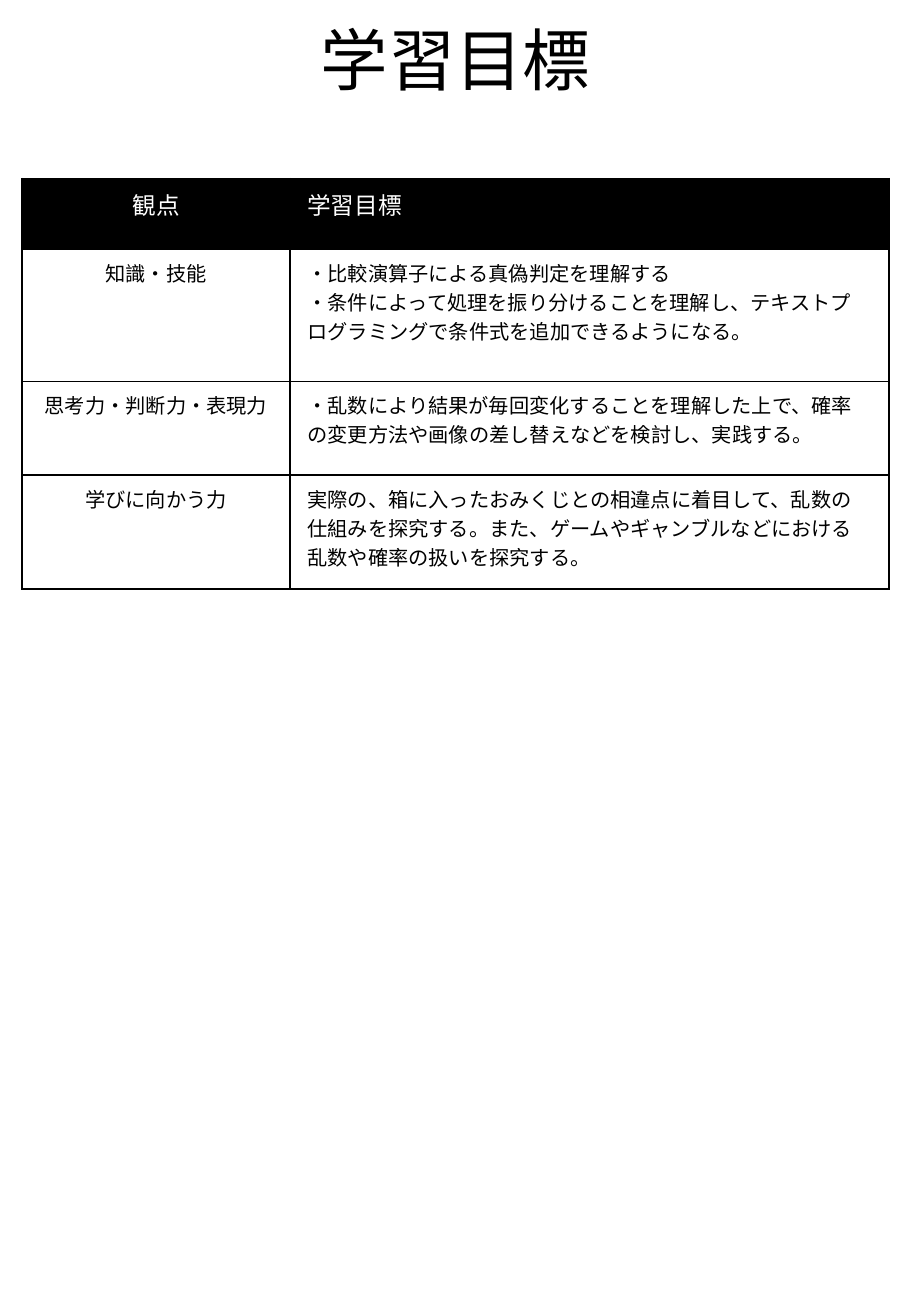
from lxml.etree import SubElement
from pptx import Presentation
from pptx.dml.color import RGBColor
from pptx.enum.text import MSO_ANCHOR as Anchor, PP_ALIGN as Align
from pptx.oxml.ns import qn
from pptx.util import Pt

TITLE = "学習目標"
HEADER = ("観点", ["学習目標"])
GOALS = [
    ("知識・技能", [
        "・比較演算子による真偽判定を理解する",
        "・条件によって処理を振り分けることを理解し、テキストプログラミングで条件式を追加できるようになる。",
    ]),
    ("思考力・判断力・表現力", [
        "・乱数により結果が毎回変化することを理解した上で、確率の変更方法や画像の差し替えなどを検討し、実践する。",
    ]),
    ("学びに向かう力", [
        "実際の、箱に入ったおみくじとの相違点に着目して、乱数の仕組みを探究する。また、ゲームやギャンブルなどにおける乱数や確率の扱いを探究する。",
    ]),
]
COLORS = {"ink": "000000", "paper": "FFFFFF"}
FONT = "Noto Sans CJK JP"
PAGE_WIDTH, PAGE_HEIGHT = 540, 780
TITLE_BOX = (40.5, 4.5, 459, 58.5)
TABLE_LEFT, TABLE_TOP = 13, 105.8
COLUMN_WIDTHS = (159, 355)
ROW_HEIGHTS = (41.8, 78.5, 55.5, 67.7)
PAD_X, PAD_Y = 10.2, 5.1
BORDER = 1


def write(frame, lines, size, color, align):
    """Fill a text frame with one paragraph per line."""
    for index, line in enumerate(lines):
        paragraph = frame.add_paragraph() if index else frame.paragraphs[0]
        paragraph.alignment = align
        run = paragraph.add_run()
        run.text = line
        run.font.size = Pt(size)
        run.font.color.rgb = RGBColor.from_string(COLORS[color])
        run.font.name = FONT
        SubElement(run._r.get_or_add_rPr(), qn("a:ea"), typeface=FONT)


def style_cell(cell, fill):
    """Give a cell its margins, borders and fill."""
    cell.margin_left = cell.margin_right = Pt(PAD_X)
    cell.margin_top = cell.margin_bottom = Pt(PAD_Y)
    properties = cell._tc.get_or_add_tcPr()
    for side in ("lnL", "lnR", "lnT", "lnB"):
        edge = SubElement(properties, qn(f"a:{side}"), w=str(Pt(BORDER)))
        solid = SubElement(edge, qn("a:solidFill"))
        SubElement(solid, qn("a:srgbClr"), val=COLORS["ink"])
    cell.fill.solid()
    cell.fill.fore_color.rgb = RGBColor.from_string(COLORS[fill])


def add_title(slide):
    """Add the centred heading."""
    frame = slide.shapes.add_textbox(*map(Pt, TITLE_BOX)).text_frame
    frame.word_wrap = True
    frame.vertical_anchor = Anchor.BOTTOM
    write(frame, [TITLE], 40, "ink", Align.CENTER)
    frame.paragraphs[0].line_spacing = 0.9


def add_goals(slide):
    """Add the table of viewpoints and learning goals."""
    rows = [HEADER, *GOALS]
    table = slide.shapes.add_table(
        len(rows), len(COLUMN_WIDTHS), Pt(TABLE_LEFT), Pt(TABLE_TOP),
        Pt(sum(COLUMN_WIDTHS)), Pt(sum(ROW_HEIGHTS))).table
    table.horz_banding = False
    for column, width in zip(table.columns, COLUMN_WIDTHS):
        column.width = Pt(width)
    for index, (viewpoint, goals) in enumerate(rows):
        table.rows[index].height = Pt(ROW_HEIGHTS[index])
        size, color, fill = (12, "ink", "paper") if index else (14, "paper", "ink")
        contents = (([viewpoint], Align.CENTER), (goals, Align.LEFT))
        for cell, (lines, align) in zip(table.rows[index].cells, contents):
            style_cell(cell, fill)
            write(cell.text_frame, lines, size, color, align)
            for paragraph in cell.text_frame.paragraphs:
                for run in paragraph.runs:
                    run.font.bold = False


def main():
    """Build and save the learning goals slide."""
    deck = Presentation()
    deck.slide_width, deck.slide_height = Pt(PAGE_WIDTH), Pt(PAGE_HEIGHT)
    slide = deck.slides.add_slide(deck.slide_layouts[6])
    add_title(slide)
    add_goals(slide)
    deck.save("out.pptx")


if __name__ == "__main__":
    main()
